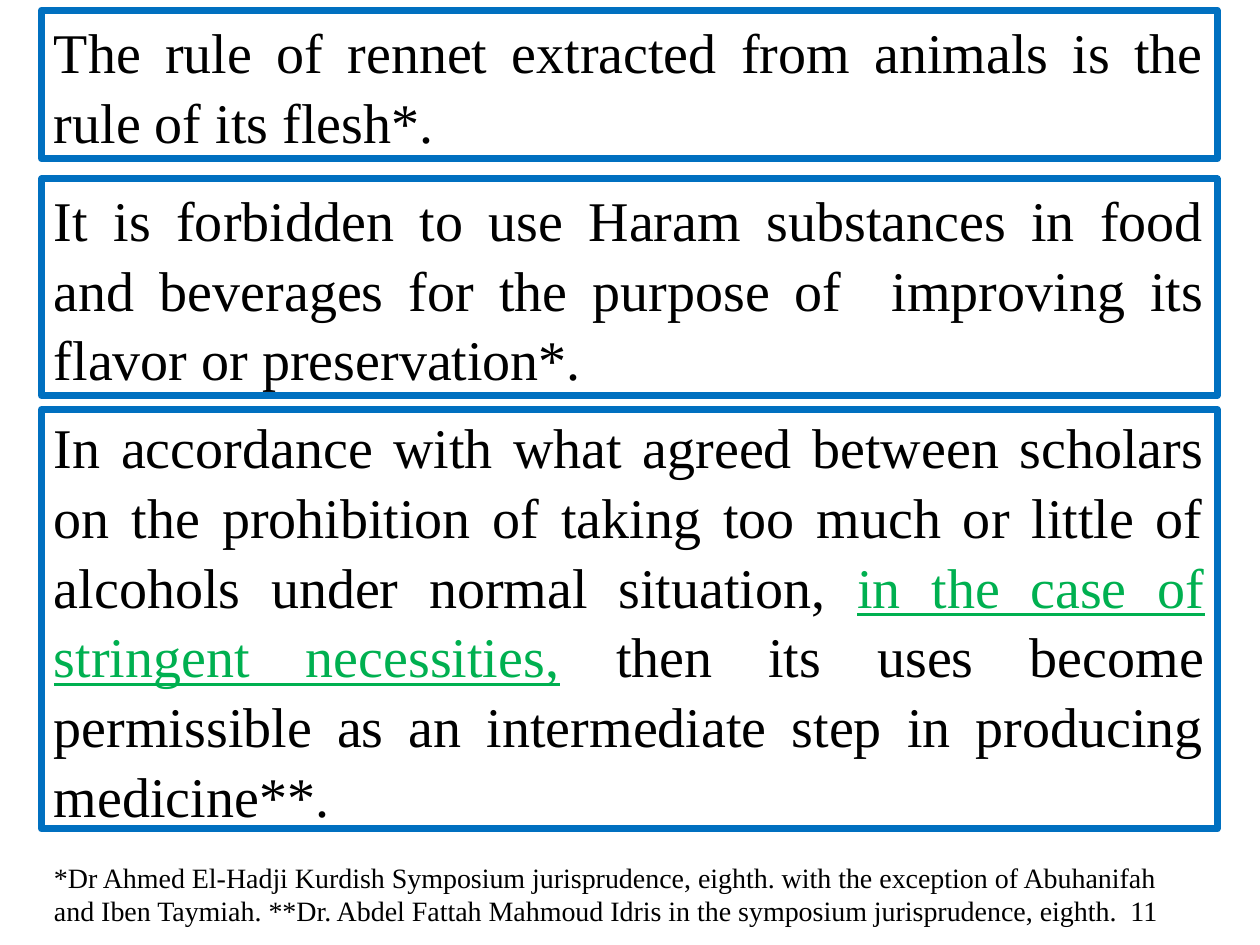
"""Build a slide of three framed rulings with a source note."""
from pptx import Presentation
from pptx import util as u
from pptx.dml.color import RGBColor
from pptx.enum import shapes, text

BLUE = RGBColor(0x00, 0x70, 0xC0)
GREEN = RGBColor(0x00, 0xB0, 0x50)
BLACK = RGBColor(0x00, 0x00, 0x00)
FACE = "Times New Roman"
LEFT = 0.33
WIDE = 9.33

RULES = [
    (0.08, 1.18, [("The rule of rennet extracted from animals is the rule of its flesh*.", False)]),
    (1.42, 1.72, [("It is forbidden to use Haram substances in food and beverages for the "
                   "purpose of  improving its flavor or preservation*.", False)]),
    (3.25, 3.33, [("In accordance with what agreed between scholars on the prohibition of "
                   "taking too much or little of alcohols under normal situation, ", False),
                  ("in the case of stringent necessities,", True),
                  (" then its uses become permissible as an intermediate step in "
                   "producing medicine**.", False)]),
]
NOTE = ("*Dr Ahmed El-Hadji Kurdish Symposium jurisprudence, eighth. with the exception of "
        "Abuhanifah and Iben Taymiah. **Dr. Abdel Fattah Mahmoud Idris in the symposium "
        "jurisprudence, eighth.  11")


def style(item, marks):
    """Set each named format value on an item."""
    for name, value in marks.items():
        setattr(item, name, value)


def write(shape, runs, size, form):
    """Fill a shape with one paragraph of plain and stressed runs."""
    shape.text_frame.word_wrap = True
    para = shape.text_frame.paragraphs[0]
    style(para, form)
    for words, stress in runs:
        run = para.add_run()
        run.text = words
        style(run.font, {"name": FACE, "size": u.Pt(size), "underline": stress})
        run.font.color.rgb = GREEN if stress else BLACK


def add_rule(slide, top, high, runs):
    """Add a blue frame that holds one ruling."""
    box = slide.shapes.add_shape(
        shapes.MSO_SHAPE.RECTANGLE,
        u.Inches(LEFT), u.Inches(top), u.Inches(WIDE), u.Inches(high))
    box.shadow.inherit = False
    box.fill.background()
    box.line.color.rgb = BLUE
    box.line.width = u.Pt(4)
    box.text_frame.vertical_anchor = text.MSO_ANCHOR.MIDDLE
    write(box, runs, 32, {"alignment": text.PP_ALIGN.JUSTIFY, "line_spacing": 1.04})


def add_note(slide):
    """Add the source note at the foot."""
    box = slide.shapes.add_textbox(
        u.Inches(LEFT), u.Inches(6.78), u.Inches(9.25), u.Inches(0.64))
    write(box, [(NOTE, False)], 16, {"alignment": text.PP_ALIGN.LEFT})


def main():
    """Build and save the deck."""
    deck = Presentation()
    style(deck, {"slide_width": u.Inches(10), "slide_height": u.Inches(7.5)})
    slide = deck.slides.add_slide(deck.slide_layouts[6])
    for top, high, runs in RULES:
        add_rule(slide, top, high, runs)
    add_note(slide)
    deck.save("out.pptx")


if __name__ == "__main__":
    main()
